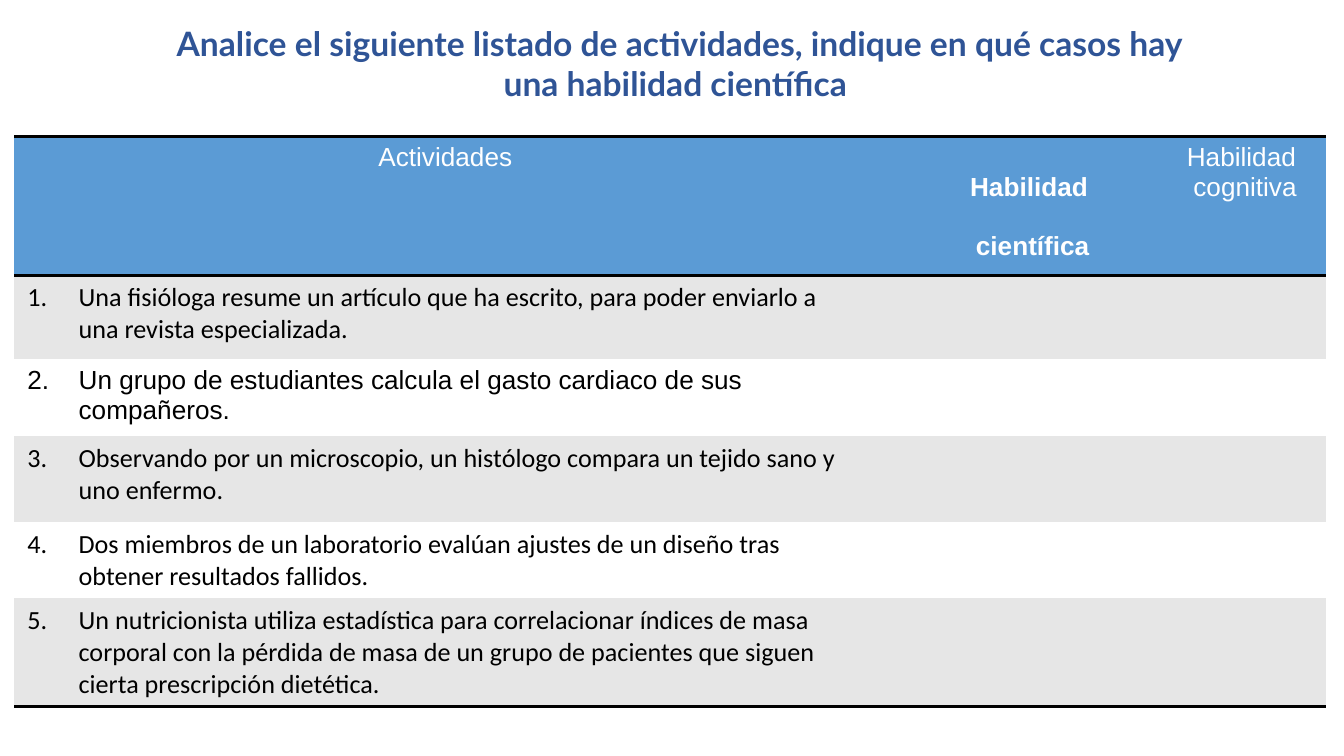
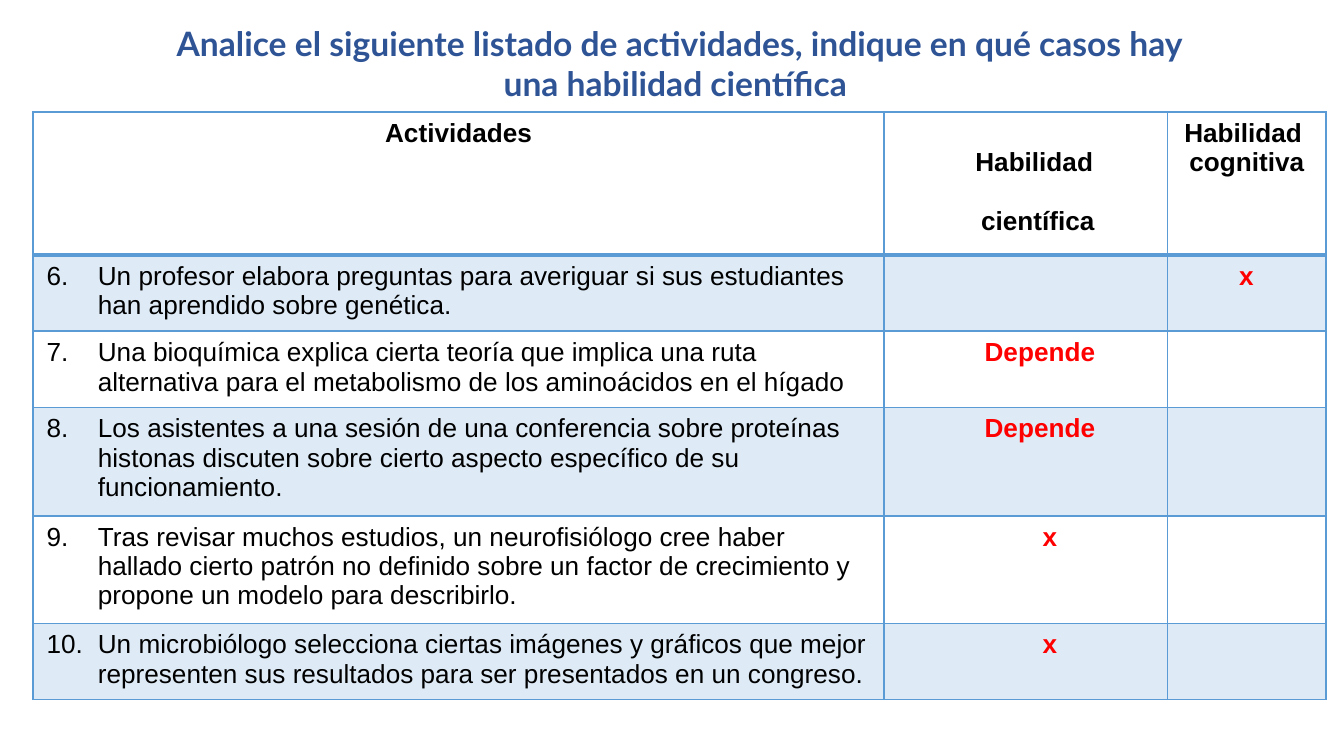
from pptx import Presentation
from pptx.dml.color import RGBColor
from pptx.enum.text import MSO_ANCHOR, MSO_AUTO_SIZE, PP_ALIGN
from pptx.oxml.ns import qn
from pptx.util import Pt
from lxml.etree import SubElement

NAVY = RGBColor(0x2F, 0x54, 0x96)
BLUE = RGBColor(0x5B, 0x9B, 0xD5)
GREY = RGBColor(0xE6, 0xE6, 0xE6)
BLACK = RGBColor(0, 0, 0)
WHITE = RGBColor(255, 255, 255)
RED = RGBColor(255, 0, 0)

TITLE = ("Analice el siguiente listado de actividades, indique en qué casos hay "
         "una habilidad científica ")
HEADS = (["Actividades"], ["Habilidad ", "científica"], ["Habilidad ", "cognitiva"])
PLAIN = "{2D5ABB26-0587-4C30-8999-92F81FD0307C}"
HANG = 27.4
LINE = 15.8
SPACE = 3.89

FIRST = [
    ("Una fisióloga resume un artículo que ha escrito, para poder enviarlo a una "
     "revista especializada.", "Calibri"),
    ("Un grupo de estudiantes calcula el gasto cardiaco de sus compañeros.", "Arial"),
    ("Observando por un microscopio, un histólogo compara un tejido sano y uno "
     "enfermo.", "Calibri"),
    ("Dos miembros de un laboratorio evalúan ajustes de un diseño tras obtener "
     "resultados fallidos.", "Calibri"),
    ("Un nutricionista utiliza estadística para correlacionar índices de masa "
     "corporal con la pérdida de masa de un grupo de pacientes que siguen cierta "
     "prescripción dietética.", "Calibri"),
]
SECOND = [
    ("Un profesor elabora preguntas para averiguar si sus estudiantes han "
     "aprendido sobre genética.", "Arial"),
    ("Una bioquímica explica cierta teoría que implica una ruta alternativa para "
     "el metabolismo de los aminoácidos en el hígado", "Arial"),
    ("Los asistentes a una sesión de una conferencia sobre proteínas histonas "
     "discuten sobre cierto aspecto específico de su funcionamiento.", "Arial"),
    ("Tras revisar muchos estudios, un neurofisiólogo cree haber hallado cierto "
     "patrón no definido sobre un factor de crecimiento y propone un modelo para "
     "describirlo.", "Arial"),
    ("Un microbiólogo selecciona ciertas imágenes y gráficos que mejor "
     "representen sus resultados para ser presentados en un congreso.", "Arial"),
]
MARKS = [(1, 2, "x", 8), (2, 1, "Depende", 12), (3, 1, "Depende", 12),
         (4, 1, "x", 20), (5, 1, "x", 20)]


def put(item, **values):
    for name, value in values.items():
        setattr(item, name, value)


def write(para, text, color, size=14, name="Arial", bold=False):
    run = para.add_run()
    run.text = text
    put(run.font, size=Pt(size), name=name, bold=bold)
    run.font.color.rgb = color


def indent(para, left, first=0):
    props = para._p.get_or_add_pPr()
    props.set("marL", str(Pt(left)))
    props.set("indent", str(Pt(first)))
    return props


def number(para, start):
    props = indent(para, HANG, -HANG)
    tint = SubElement(props, qn("a:buClr"))
    SubElement(tint, qn("a:srgbClr"), val=str(BLACK))
    SubElement(props, qn("a:buAutoNum"), type="arabicPeriod", startAt=str(start))


def paint(cell, color, alpha=None):
    if color is None:
        cell.fill.background()
        return
    cell.fill.solid()
    cell.fill.fore_color.rgb = color
    if alpha:
        tone = cell._tc.tcPr.find(".//" + qn("a:srgbClr"))
        SubElement(tone, qn("a:alpha"), val=str(alpha * 1000))


def border(cell, color, **sides):
    props = cell._tc.get_or_add_tcPr()
    spot = 0
    for side in "LRTB":
        if side in sides:
            line = SubElement(props, qn("a:ln" + side), w=str(Pt(sides[side])))
            fill = SubElement(line, qn("a:solidFill"))
            SubElement(fill, qn("a:srgbClr"), val=str(color))
            props.insert(spot, line)
            spot += 1


def add_page(deck):
    slide = deck.slides.add_slide(deck.slide_layouts[5])
    title = slide.shapes.title
    put(title, left=Pt(85.7), top=Pt(-3.6), width=Pt(556.5), height=Pt(63.4))
    frame = title.text_frame
    put(frame, word_wrap=True, auto_size=MSO_AUTO_SIZE.SHAPE_TO_FIT_TEXT,
        vertical_anchor=MSO_ANCHOR.TOP, margin_left=Pt(7.2), margin_right=Pt(7.2),
        margin_top=Pt(15.7), margin_bottom=Pt(3.6))
    para = frame.paragraphs[0]
    put(para, alignment=PP_ALIGN.CENTER, line_spacing=1.0)
    write(para, TITLE, NAVY, 18, "Lato", True)
    return slide


def add_grid(slide, left, top, cols, rows):
    frame = slide.shapes.add_table(len(rows), len(cols), Pt(left), Pt(top),
                                   Pt(sum(cols)), Pt(sum(rows)))
    grid = frame.table
    put(grid, first_row=False, horz_banding=False)
    grid._tbl.tblPr.find(qn("a:tableStyleId")).text = PLAIN
    for col, width in zip(grid.columns, cols):
        col.width = Pt(width)
    for row, height in zip(grid.rows, rows):
        row.height = Pt(height)
    return grid


def fill_head(grid, color, bolds):
    for col, (lines, bold) in enumerate(zip(HEADS, bolds)):
        cell = grid.cell(0, col)
        frame = cell.text_frame
        for spot, text in enumerate(lines):
            para = frame.add_paragraph() if spot else frame.paragraphs[0]
            para.alignment = PP_ALIGN.CENTER
            if col == 1 and spot:
                para.space_before = Pt(LINE)
            write(para, text, color, bold=bold)
        if col == 1:
            put(cell, margin_top=Pt(3.6 + LINE), margin_left=Pt(20.2))


def fill_list(grid, items, start):
    for row, (text, name) in enumerate(items, 1):
        para = grid.cell(row, 0).text_frame.paragraphs[0]
        number(para, start + row - 1)
        write(para, text, BLACK, name=name)


def add_mark(grid, row, col, text, gap):
    para = grid.cell(row, col).text_frame.paragraphs[0]
    indent(para, gap * SPACE)
    write(para, text, RED, bold=True)


def each(grid):
    for row in range(len(grid.rows)):
        for col in range(len(grid.columns)):
            yield row, grid.cell(row, col)


def add_tasks(deck):
    grid = add_grid(add_page(deck), 7.5, 73, (462.2, 154.1, 86.4),
                    (74.5, 45, 41.3, 46, 40.8, 57.8))
    fill_head(grid, WHITE, (False, True, False))
    fill_list(grid, FIRST, 1)
    for row, cell in each(grid):
        paint(cell, BLUE if row == 0 else GREY if row % 2 else WHITE)
        if row == 0:
            border(cell, BLACK, T=2, B=2)
        elif row == len(FIRST):
            border(cell, BLACK, B=2)


def add_key(deck):
    grid = add_grid(add_page(deck), 17.8, 60, (455.8, 151.9, 85),
                    (76.6, 40.8, 40.8, 58, 57.5, 40.8))
    fill_head(grid, BLACK, (True, True, True))
    fill_list(grid, SECOND, 6)
    for mark in MARKS:
        add_mark(grid, *mark)
    for row, cell in each(grid):
        paint(cell, BLUE if row % 2 else None, 20)
        border(cell, BLUE, L=1, R=1, T=2 if row == 1 else 1, B=1 if row else 2)


def main():
    deck = Presentation()
    put(deck, slide_width=Pt(720), slide_height=Pt(405))
    add_tasks(deck)
    add_key(deck)
    deck.save("out.pptx")


if __name__ == "__main__":
    main()
